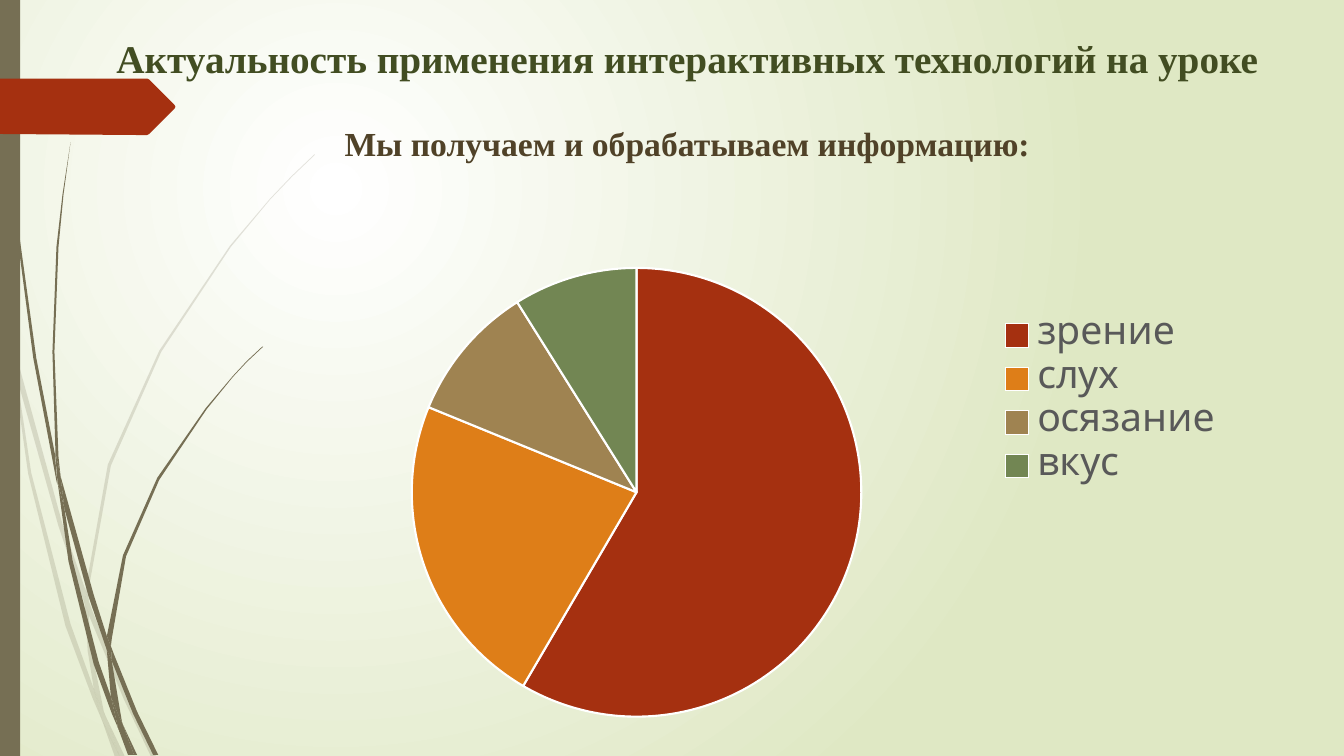
from lxml import etree
from pptx import Presentation
from pptx import util as u
from pptx.chart.data import CategoryChartData
from pptx.dml.color import RGBColor
from pptx.enum import chart as ch, shapes, text
from pptx.oxml import parse_xml
from pptx.oxml.ns import qn

OLIVE, RED = "766F54", "A53010"
SERIF, SANS = "Times New Roman", "League Spartan"
NS = ('xmlns:a="http://schemas.openxmlformats.org/drawingml/2006/main" '
      'xmlns:p="http://schemas.openxmlformats.org/presentationml/2006/main" '
      'xmlns:c="http://schemas.openxmlformats.org/drawingml/2006/chart"')

# Outlines in hundredths of an inch
PALE_GRASS = [
    [(11, 350), (9, 322), (0, 282), (0, 299), (10, 344)],
    [(58, 522), (84, 599), (85, 586), (62, 520), (14, 345), (17, 376)],
    [(92, 607), (88, 596), (88, 610), (123, 694), (150, 751), (155, 751), (127, 692)],
    [(119, 751), (124, 751), (105, 711)],
    [(93, 683), (70, 619), (31, 469), (17, 376), (11, 350), (28, 470), (65, 621),
     (92, 693), (101, 714), (99, 707)],
    [(84, 599), (87, 646), (93, 683), (96, 692), (105, 711), (103, 706), (91, 646),
     (88, 610), (88, 608)],
    [(88, 584), (110, 462), (160, 349), (229, 245), (268, 198), (290, 175), (312, 154),
     (312, 153), (289, 175), (268, 197), (228, 244), (158, 348), (107, 461), (85, 584),
     (85, 586), (88, 596)],
    [(101, 714), (114, 751), (119, 751)],
    [(88, 608), (88, 610), (88, 596), (85, 586), (84, 599)],
    [(96, 692), (93, 683), (99, 707), (101, 714), (119, 751), (105, 711)],
]
DARK_GRASS = [
    [(7, 110), (17, 233), (33, 355), (56, 477), (57, 481), (55, 457), (55, 453), (36, 355),
     (19, 232), (8, 109), (5, 48), (4, 0), (3, 0), (4, 48)],
    [(88, 592), (106, 645), (106, 633), (106, 631), (93, 590), (60, 472), (64, 505)],
    [(113, 649), (110, 641), (111, 656), (132, 708), (152, 749), (157, 749), (136, 706)],
    [(110, 691), (98, 657), (72, 556), (64, 505), (57, 477), (68, 557), (93, 659),
     (111, 708), (117, 722), (116, 717)],
    [(60, 472), (58, 453), (54, 349), (58, 245), (63, 193), (70, 141), (62, 193), (56, 245),
     (52, 349), (55, 449)],
    [(133, 749), (136, 749), (122, 719)],
    [(57, 477), (64, 505), (60, 472), (55, 449), (55, 453)],
    [(111, 633), (125, 552), (158, 476), (205, 406), (231, 374), (245, 359), (261, 344),
     (260, 344), (245, 358), (231, 373), (204, 405), (156, 474), (122, 551), (106, 631),
     (110, 641)],
    [(117, 722), (127, 749), (131, 749)],
    [(106, 645), (110, 691), (116, 706), (122, 719), (121, 716), (111, 656), (109, 651)],
    [(106, 645), (109, 651), (111, 656), (110, 641), (106, 631), (106, 633)],
    [(116, 706), (110, 691), (116, 717), (117, 722), (130, 749), (133, 749), (122, 719)],
]
TAG = [(173, 108), (148, 133), (146, 134), (136, 134), (0, 133), (0, 78), (136, 78),
       (146, 78), (148, 79), (173, 104), (174, 106)]


def rgb(color):
    return RGBColor.from_string(color)


def paint(sp, color, alpha=None):
    sp.shadow.inherit = False
    sp.fill.solid()
    sp.fill.fore_color.rgb = rgb(color)
    sp.line.fill.background()
    if alpha:
        clr = sp.fill._xPr.find(".//" + qn("a:srgbClr"))
        etree.SubElement(clr, qn("a:alpha"), val=str(alpha * 1000))


def add_outline(parent, points, color, alpha=None):
    fb = parent.shapes.build_freeform(*points[0], scale=u.Inches(0.01))
    fb.add_line_segments(points[1:])
    paint(fb.convert_to_shape(), color, alpha)


def add_grass(s, pieces, alpha=None):
    group = s.shapes.add_group_shape()
    for points in pieces:
        add_outline(group, points, OLIVE, alpha)


def set_background(s):
    bg = parse_xml(
        f'<p:bg {NS}><p:bgPr><a:gradFill rotWithShape="1"><a:gsLst>'
        '<a:gs pos="0"><a:srgbClr val="FFFFFF"/></a:gs>'
        '<a:gs pos="100000"><a:srgbClr val="DFE8C4"/></a:gs></a:gsLst>'
        '<a:path path="circle"><a:fillToRect l="50000" t="50000" r="100000" b="100000"/>'
        '</a:path></a:gradFill><a:effectLst/></p:bgPr></p:bg>')
    s._element.cSld.insert(0, bg)


def add_heading(s, lines):
    box = s.shapes.add_textbox(u.Inches(0.42), u.Inches(0.29), u.Inches(12.79), u.Inches(1.29))
    tf = box.text_frame
    tf.word_wrap = True
    for i, (words, size, color, before) in enumerate(lines):
        p = tf.add_paragraph() if i else tf.paragraphs[0]
        p.alignment = text.PP_ALIGN.CENTER
        p.space_before = u.Pt(before)
        r = p.add_run()
        r.text = words
        r.font.name, r.font.size, r.font.bold = SERIF, u.Pt(size), True
        r.font.color.rgb = rgb(color)


def add_pie(s, slices):
    data = CategoryChartData()
    data.categories = [name for name, _, _ in slices]
    data.add_series("Series 1", [value for _, value, _ in slices])
    chart = s.shapes.add_chart(ch.XL_CHART_TYPE.PIE, u.Inches(0), u.Inches(0.84),
                               u.Inches(12.26), u.Inches(6.28), data).chart
    chart.has_title = False
    chart.font.name, chart.font.size = SANS, u.Pt(10)
    chart.has_legend = True
    legend = chart.legend
    legend.position = ch.XL_LEGEND_POSITION.RIGHT
    legend.include_in_layout = False
    legend.font.name, legend.font.size = SANS, u.Pt(28)
    legend.font.color.rgb = rgb("595959")
    plot = chart.plots[0]
    plot.vary_by_categories = True
    for i, (_, _, color) in enumerate(slices):
        fmt = plot.series[0].points[i].format
        fmt.fill.solid()
        fmt.fill.fore_color.rgb = rgb(color)
        fmt.line.color.rgb = rgb("FFFFFF")
        fmt.line.width = u.Pt(1.5)
    # Fixed place of the pie inside the chart
    area = chart._chartSpace.chart.plotArea
    for old in area.findall(qn("c:layout")):
        area.remove(old)
    area.insert(0, parse_xml(
        f'<c:layout {NS}><c:manualLayout><c:layoutTarget val="inner"/>'
        '<c:xMode val="edge"/><c:yMode val="edge"/><c:x val="0.28"/><c:y val="0.29"/>'
        '<c:w val="0.47"/><c:h val="0.71"/></c:manualLayout></c:layout>'))


def main():
    prs = Presentation()
    prs.slide_width, prs.slide_height = u.Inches(13.33), u.Inches(7.5)
    s = prs.slides.add_slide(prs.slide_layouts[6])
    set_background(s)

    # Decoration on the left
    add_grass(s, PALE_GRASS, alpha=20)
    add_grass(s, DARK_GRASS)
    bar = s.shapes.add_shape(shapes.MSO_SHAPE.RECTANGLE, 0, 0, u.Inches(0.2), u.Inches(7.5))
    paint(bar, OLIVE)
    add_outline(s, TAG, RED)

    # Heading and chart
    add_heading(s, [
        ("Актуальность применения интерактивных технологий на уроке", 28, "424D22", 3),
        ("Мы получаем и обрабатываем информацию:", 24, "504228", 30),
    ])
    add_pie(s, [("зрение", 59, RED), ("слух", 23, "DE7E18"),
                ("осязание", 10, "9F8351"), ("вкус", 9, "728653")])
    prs.save("out.pptx")


if __name__ == "__main__":
    main()
